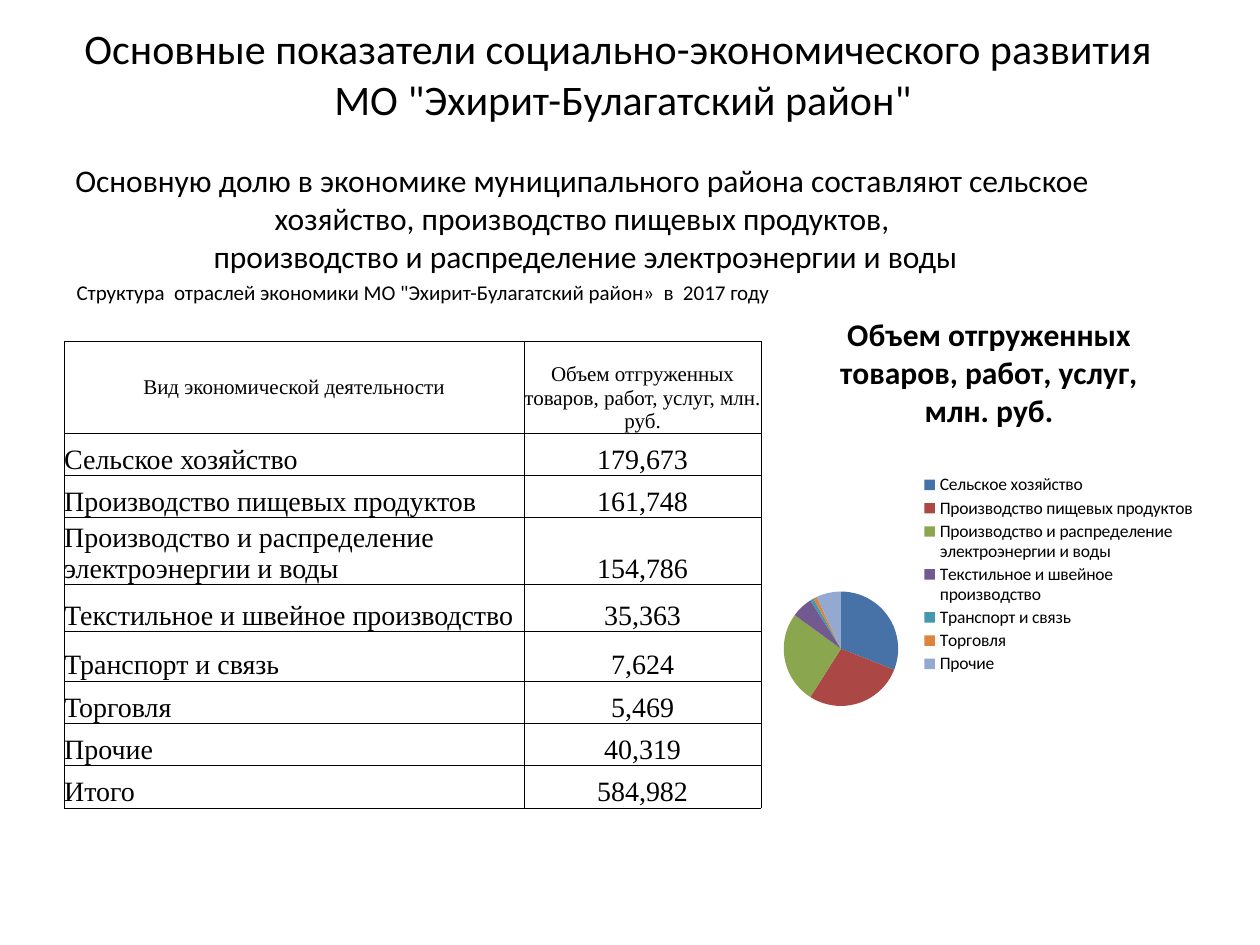
"""Build a slide on the economy of a district: headings, a table and a pie chart."""
from lxml.etree import SubElement
from pptx import Presentation
from pptx.chart.data import CategoryChartData as ChartData
from pptx.dml.color import RGBColor as Rgb
from pptx.enum.chart import XL_CHART_TYPE as Kind, XL_LEGEND_POSITION as Place
from pptx.enum.text import MSO_ANCHOR as Anchor, PP_ALIGN as Align
from pptx.oxml import parse_xml
from pptx.oxml.ns import nsdecls, qn
from pptx.util import Pt

COLORS = {
    "text": "000000", "blue": "4672A8", "red": "AB4744", "green": "8AA64F",
    "violet": "725990", "teal": "4299B0", "orange": "DC853E", "pale": "93A9D0",
}
SLICES = ["blue", "red", "green", "violet", "teal", "orange", "pale"]
SERIF = "Times New Roman"
HEADS = ["Вид экономической деятельности", "Объем отгруженных товаров, работ, услуг, млн. руб."]
ROWS = [
    ("Сельское хозяйство", "179,673", 31),
    ("Производство пищевых продуктов", "161,748", 28),
    ("Производство и распределение электроэнергии и воды", "154,786", 26),
    ("Текстильное и швейное производство", "35,363", 6),
    ("Транспорт и связь", "7,624", 1),
    ("Торговля", "5,469", 1),
    ("Прочие", "40,319", 7),
]
TOTAL = ("Итого", "584,982")
WIDTHS = [262.8, 135.4]
HEIGHTS = [52.3] + [24.2] * 3 + [26.8, 28.2] + [24.2] * 3


def style(font, size, name="Calibri", bold=False):
    """Set size, face, weight and colour of a font."""
    font.size, font.name, font.bold = Pt(size), name, bold
    font.color.rgb = Rgb.from_string(COLORS["text"])


def write(frame, text, size, align=Align.CENTER, **kind):
    """Fill a text frame, one paragraph per line."""
    frame.word_wrap = True
    frame.text = text
    for para in frame.paragraphs:
        para.alignment = align
        for run in para.runs:
            style(run.font, size, **kind)


def add_text(slide, box, text, size, **kind):
    """Add a text box."""
    shape = slide.shapes.add_textbox(*map(Pt, box))
    write(shape.text_frame, text, size, **kind)


def edge(cell):
    """Draw a thin line on all sides of a cell."""
    props = cell._tc.get_or_add_tcPr()
    for side in "LRTB":
        line = SubElement(props, qn(f"a:ln{side}"), w=str(Pt(0.5)))
        fill = SubElement(line, qn("a:solidFill"))
        SubElement(fill, qn("a:srgbClr"), val=COLORS["text"])


def add_grid(slide, left, top):
    """Add the table of sectors."""
    lines = [HEADS] + [row[:2] for row in ROWS] + [TOTAL]
    shape = slide.shapes.add_table(
        len(lines), 2, Pt(left), Pt(top), Pt(sum(WIDTHS)), Pt(sum(HEIGHTS)))
    table = shape.table
    table.first_row = table.horz_banding = False
    for col, width in zip(table.columns, WIDTHS):
        col.width = Pt(width)
    for row, height in zip(table.rows, HEIGHTS):
        row.height = Pt(height)
    for i, line in enumerate(lines):
        for j, text in enumerate(line):
            cell = table.cell(i, j)
            cell.margin_left = cell.margin_right = 0
            cell.margin_top = cell.margin_bottom = 0
            cell.vertical_anchor = Anchor.MIDDLE if i + j == 0 else Anchor.BOTTOM
            edge(cell)
            cell.fill.background()
            align = Align.LEFT if i and not j else Align.CENTER
            write(cell.text_frame, text, 16 if i else 12, align=align, name=SERIF)


def layout(x, y, w, h, inner=False):
    """Return a manual chart layout given in shares of the chart."""
    target = '<c:layoutTarget val="inner"/>' if inner else ""
    return parse_xml(
        f'<c:layout {nsdecls("c")}><c:manualLayout>{target}'
        '<c:xMode val="edge"/><c:yMode val="edge"/>'
        f'<c:x val="{x}"/><c:y val="{y}"/><c:w val="{w}"/><c:h val="{h}"/>'
        '</c:manualLayout></c:layout>')


def place(node, spot, index):
    """Put a layout into a chart part in place of any old one."""
    for old in node.findall(qn("c:layout")):
        node.remove(old)
    node.insert(index, spot)


def add_pie(slide, box):
    """Add the pie chart of sector shares."""
    data = ChartData()
    data.categories = [row[0] for row in ROWS]
    data.add_series(HEADS[1], [row[2] for row in ROWS])
    chart = slide.shapes.add_chart(Kind.PIE, *map(Pt, box), data).chart
    style(chart.font, 10)
    chart.has_title = True
    write(chart.chart_title.text_frame, HEADS[1], 18, bold=True)
    chart.chart_title.include_in_layout = False
    chart.has_legend = True
    legend = chart.legend
    legend.position = Place.RIGHT
    legend.include_in_layout = False
    style(legend.font, 10)
    plot = chart.plots[0]
    plot.vary_by_categories = True
    for i, color in enumerate(SLICES):
        fill = plot.series[0].points[i].format.fill
        fill.solid()
        fill.fore_color.rgb = Rgb.from_string(COLORS[color])
    area = chart._chartSpace.chart.plotArea
    place(area, layout(0.04, 0.53, 0.26, 0.2, inner=True), 0)
    place(legend._element, layout(0.33, 0.32, 0.65, 0.36), 1)


def main():
    """Build and save the slide."""
    deck = Presentation()
    deck.slide_width, deck.slide_height = Pt(720), Pt(540)
    slide = deck.slides.add_slide(deck.slide_layouts[6])
    add_text(slide, (18.7, 9.4, 674.6, 65.5),
             "Основные показатели социально-экономического развития \n"
             'МО "Эхирит-Булагатский район"', 24)
    add_text(slide, (36.7, 156.2, 419.8, 21.6),
             'Структура  отраслей экономики МО "Эхирит-Булагатский район»  в  2017 году',
             12, align=Align.LEFT)
    add_text(slide, (25.2, 88.6, 614.9, 72.7),
             "Основную долю в экономике муниципального района составляют сельское "
             "хозяйство, производство пищевых продуктов,\n"
             " производство и распределение электроэнергии и воды", 18)
    add_grid(slide, 36.7, 195.1)
    add_pie(slide, (437, 164.9, 256.3, 326.9))
    deck.save("out.pptx")


if __name__ == "__main__":
    main()
